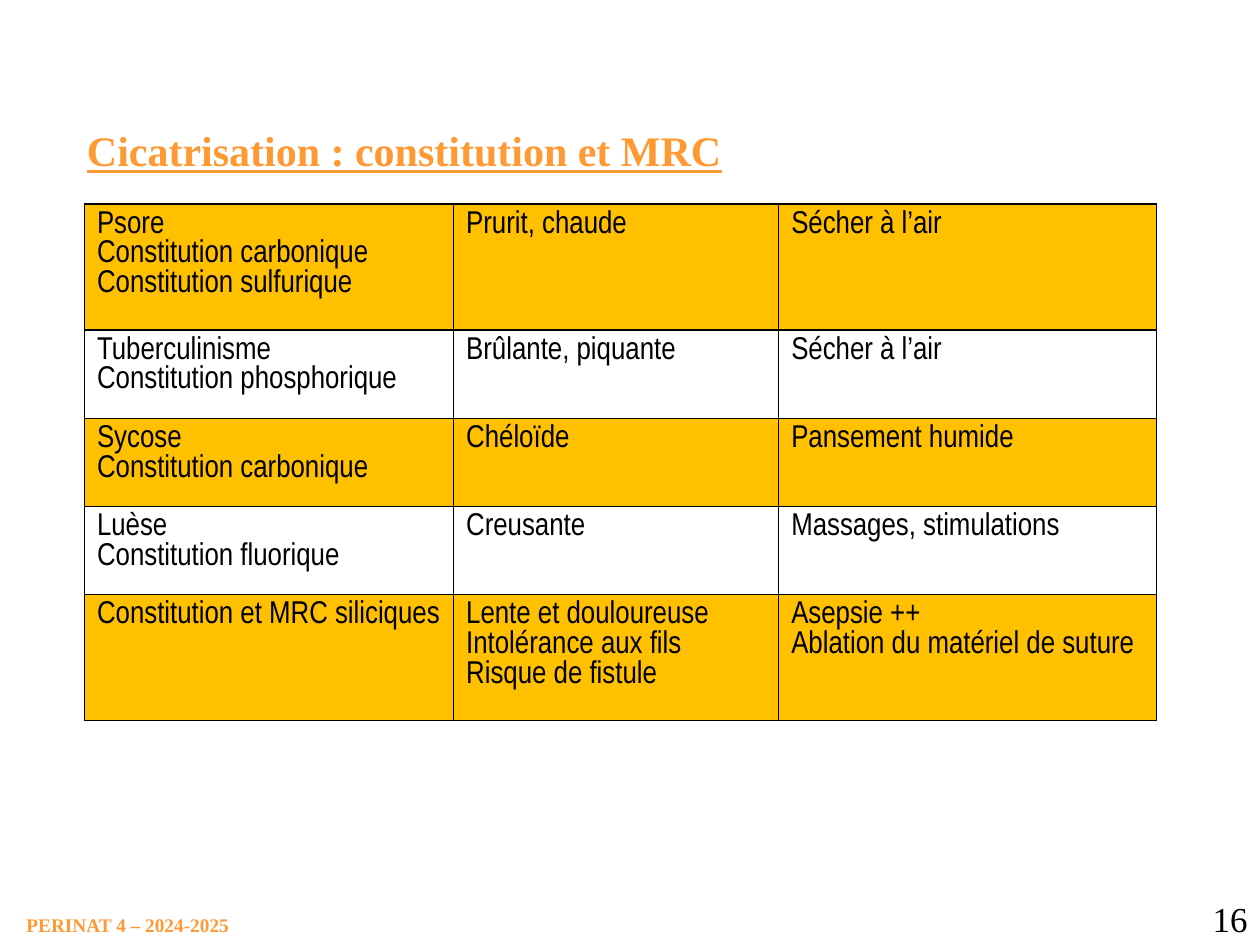
from dataclasses import dataclass

from lxml import etree
from pptx import Presentation
from pptx.dml.color import RGBColor
from pptx.enum.text import MSO_ANCHOR, PP_ALIGN
from pptx.oxml.ns import qn
from pptx.util import Inches, Pt

LEFT, RIGHT = PP_ALIGN.LEFT, PP_ALIGN.RIGHT
TOP, MIDDLE = MSO_ANCHOR.TOP, MSO_ANCHOR.MIDDLE


@dataclass(frozen=True)
class Theme:
    """Colours, fonts and type sizes of the slide."""
    orange: str = "FF9933"
    gold: str = "FFC000"
    black: str = "000000"
    serif: str = "Times New Roman"
    narrow: str = "Arial Narrow"
    title: int = 24
    number: int = 20
    body: int = 18
    footer: int = 11
    rule: int = 1


THEME = Theme()

COLS = (2.93, 2.58, 3)
ROWS = (1, 0.7, 0.7, 0.7, 1)
CELLS = (
    ("Psore\nConstitution carbonique\nConstitution sulfurique",
     "Prurit, chaude", "Sécher à l’air"),
    ("Tuberculinisme\nConstitution phosphorique",
     "Brûlante, piquante", "Sécher à l’air"),
    ("Sycose\nConstitution carbonique", "Chéloïde", "Pansement humide"),
    ("Luèse\nConstitution fluorique", "Creusante", "Massages, stimulations"),
    ("Constitution et MRC siliciques",
     "Lente et douloureuse\nIntolérance aux fils\nRisque de fistule",
     "Asepsie ++\nAblation du matériel de suture"),
)


def write(frame, text, size, color, face, bold=False, align=LEFT):
    """Fill a text frame and format each of its paragraphs."""
    frame.text = text
    for para in frame.paragraphs:
        para.alignment = align
        font = para.font
        font.name, font.size, font.bold = face, Pt(size), bold
        font.color.rgb = RGBColor.from_string(color)


def place(shape, left, top, width, height):
    """Set the place and size of a shape."""
    shape.left, shape.top = Inches(left), Inches(top)
    shape.width, shape.height = Inches(width), Inches(height)


def add_title(slide, text):
    """Move and format the title placeholder."""
    title = slide.shapes.title
    place(title, 0.59, 0.91, 9, 0.56)
    frame = title.text_frame
    write(frame, text, THEME.title, THEME.orange, THEME.serif, True)
    frame.paragraphs[0].font.underline = True
    frame.vertical_anchor = MIDDLE


def add_label(slide, box, text, size, color, inset=None, **style):
    """Add a text box, with an equal inset on all sides if given."""
    frame = slide.shapes.add_textbox(*map(Inches, box)).text_frame
    frame.word_wrap = inset is None
    if inset is not None:
        frame.margin_left = frame.margin_right = Inches(inset)
        frame.margin_top = frame.margin_bottom = Inches(inset)
    frame.vertical_anchor = TOP
    write(frame, text, size, color, THEME.serif, **style)


def add_edges(cell):
    """Draw thin black borders round a cell."""
    props = cell._tc.get_or_add_tcPr()
    for spot, side in enumerate(("lnL", "lnR", "lnT", "lnB")):
        line = etree.Element(qn(f"a:{side}"), w=str(Pt(THEME.rule)))
        fill = etree.SubElement(line, qn("a:solidFill"))
        etree.SubElement(fill, qn("a:srgbClr"), val=THEME.black)
        props.insert(spot, line)


def add_grid(slide):
    """Add the table with every other row in gold."""
    shape = slide.shapes.add_table(
        len(ROWS), len(COLS), Inches(0.67), Inches(1.62),
        Inches(sum(COLS)), Inches(sum(ROWS)))
    table = shape.table
    table.first_row = table.horz_banding = False
    for col, width in zip(table.columns, COLS):
        col.width = Inches(width)
    for i, (row, height, texts) in enumerate(zip(table.rows, ROWS, CELLS)):
        row.height = Inches(height)
        for cell, text in zip(row.cells, texts):
            write(cell.text_frame, text, THEME.body, THEME.black, THEME.narrow)
            if i % 2:
                cell.fill.background()
            else:
                cell.fill.solid()
                cell.fill.fore_color.rgb = RGBColor.from_string(THEME.gold)
            add_edges(cell)


def main():
    """Build and save the slide."""
    deck = Presentation()
    deck.slide_width, deck.slide_height = Inches(10), Inches(7.5)
    slide = deck.slides.add_slide(deck.slide_layouts[5])
    add_title(slide, "Cicatrisation : constitution et MRC")
    add_grid(slide)
    add_label(slide, (0.21, 7.25, 1.64, 0.19), "PERINAT 4 – 2024-2025",
              THEME.footer, THEME.orange, inset=0, bold=True)
    add_label(slide, (9.17, 7.07, 0.83, 0.43), "16",
              THEME.number, THEME.black, align=RIGHT)
    deck.save("out.pptx")


if __name__ == "__main__":
    main()
